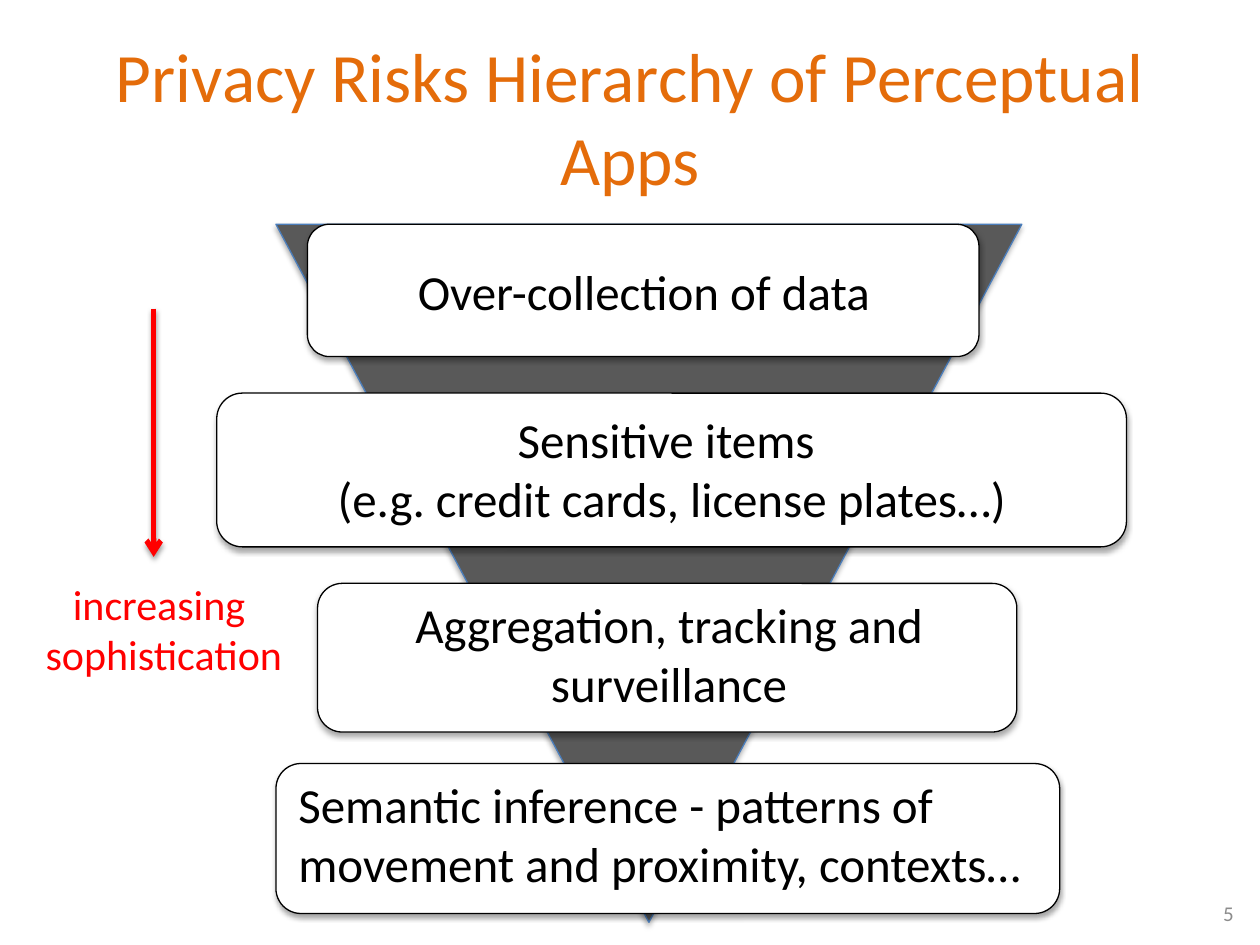
from pptx import Presentation
from pptx.dml.color import RGBColor
from pptx.enum.shapes import MSO_CONNECTOR, MSO_SHAPE
from pptx.enum.text import MSO_ANCHOR, PP_ALIGN
from pptx.oxml import parse_xml
from pptx.oxml.ns import nsdecls, qn
from pptx.util import Inches, Pt

LEFT, MID, RIGHT = PP_ALIGN.LEFT, PP_ALIGN.CENTER, PP_ALIGN.RIGHT
TOP, CENTER = MSO_ANCHOR.TOP, MSO_ANCHOR.MIDDLE
FUNNEL, CARD = MSO_SHAPE.ISOSCELES_TRIANGLE, MSO_SHAPE.ROUNDED_RECTANGLE
STRAIGHT = MSO_CONNECTOR.STRAIGHT

ORANGE = RGBColor(0xE4, 0x6C, 0x0A)
RED = RGBColor(0xFF, 0x00, 0x00)
BLACK = RGBColor(0x00, 0x00, 0x00)
WHITE = RGBColor(0xFF, 0xFF, 0xFF)
DARK = RGBColor(0x59, 0x59, 0x59)
GRAY = RGBColor(0x8C, 0x8C, 0x8C)
BLUE = RGBColor(0x4B, 0x7E, 0xBC)

deck = Presentation()
deck.slide_width, deck.slide_height = Inches(10), Inches(7.5)
slide = deck.slides.add_slide(deck.slide_layouts[5])
shapes = slide.shapes


def write(text, box, holder=None, size=28, color=BLACK, align=MID, anchor=TOP):
    area = [Inches(n) for n in box]
    holder = holder or shapes.add_textbox(*area)
    holder.left, holder.top, holder.width, holder.height = area
    frame = holder.text_frame
    frame.word_wrap = True
    frame.vertical_anchor = anchor
    frame.text = text
    for para in frame.paragraphs:
        para.alignment = align
        font = para.runs[0].font
        font.name, font.size = "Calibri", Pt(size)
        font.color.rgb = color


def shade(shape, dist=1.8, alpha=35):
    shape.element.spPr.append(parse_xml(
        f'<a:effectLst {nsdecls("a")}><a:outerShdw blurRad="{Pt(3.1)}" '
        f'dist="{Pt(dist)}" dir="5400000" rotWithShape="0">'
        f'<a:srgbClr val="000000"><a:alpha val="{alpha * 1000}"/></a:srgbClr>'
        '</a:outerShdw></a:effectLst>'))


funnel = (FUNNEL, (2.19, 1.78, 5.92, 5.54), 180, DARK, BLUE, None, None, None)
cards = [
    ((2.44, 1.78, 5.33, 1.05), "Over-collection of data",
     (2.82, 2.03, 4.58, 0.57), MID),
    ((1.72, 3.12, 7.22, 1.22),
     "Sensitive items \n(e.g. credit cards, license plates…)",
     (1.72, 3.2, 7.22, 1.04), MID),
    ((2.52, 4.63, 5.55, 1.18), "Aggregation, tracking and surveillance",
     (2.56, 4.67, 5.5, 1.51), MID),
    ((2.19, 6.06, 6.22, 1.19),
     "Semantic inference - patterns of movement and proximity, contexts…",
     (2.27, 6.1, 6.09, 1.04), LEFT),
]
parts = [funnel] + [(CARD, box, 0, WHITE, BLACK, *rest) for box, *rest in cards]

for kind, box, turn, fill, edge, text, area, align in parts:
    shape = shapes.add_shape(kind, *[Inches(n) for n in box])
    shape.rotation = turn
    shape.fill.solid()
    shape.fill.fore_color.rgb = fill
    shape.line.color.rgb = edge
    shape.line.width = Pt(0.75)
    shade(shape)
    if text:
        write(text, area, align=align)

write("Privacy Risks Hierarchy of Perceptual Apps", (0.5, 0.3, 9, 1.25),
      holder=shapes.title, size=39.6, color=ORANGE, anchor=CENTER)
write("increasing \nsophistication", (0.21, 4.54, 2.18, 0.91),
      size=24, color=RED)
write("5", (7.56, 7.05, 2.33, 0.4),
      size=12, color=GRAY, align=RIGHT, anchor=CENTER)

arrow = shapes.add_connector(
    STRAIGHT, Inches(1.22), Inches(2.45), Inches(1.22), Inches(4.42))
arrow.line.color.rgb = RED
arrow.line.width = Pt(3)
arrow.element.spPr.find(qn("a:ln")).append(
    parse_xml(f'<a:tailEnd {nsdecls("a")} type="arrow"/>'))
shade(arrow, dist=1.6, alpha=38)

deck.save("out.pptx")
